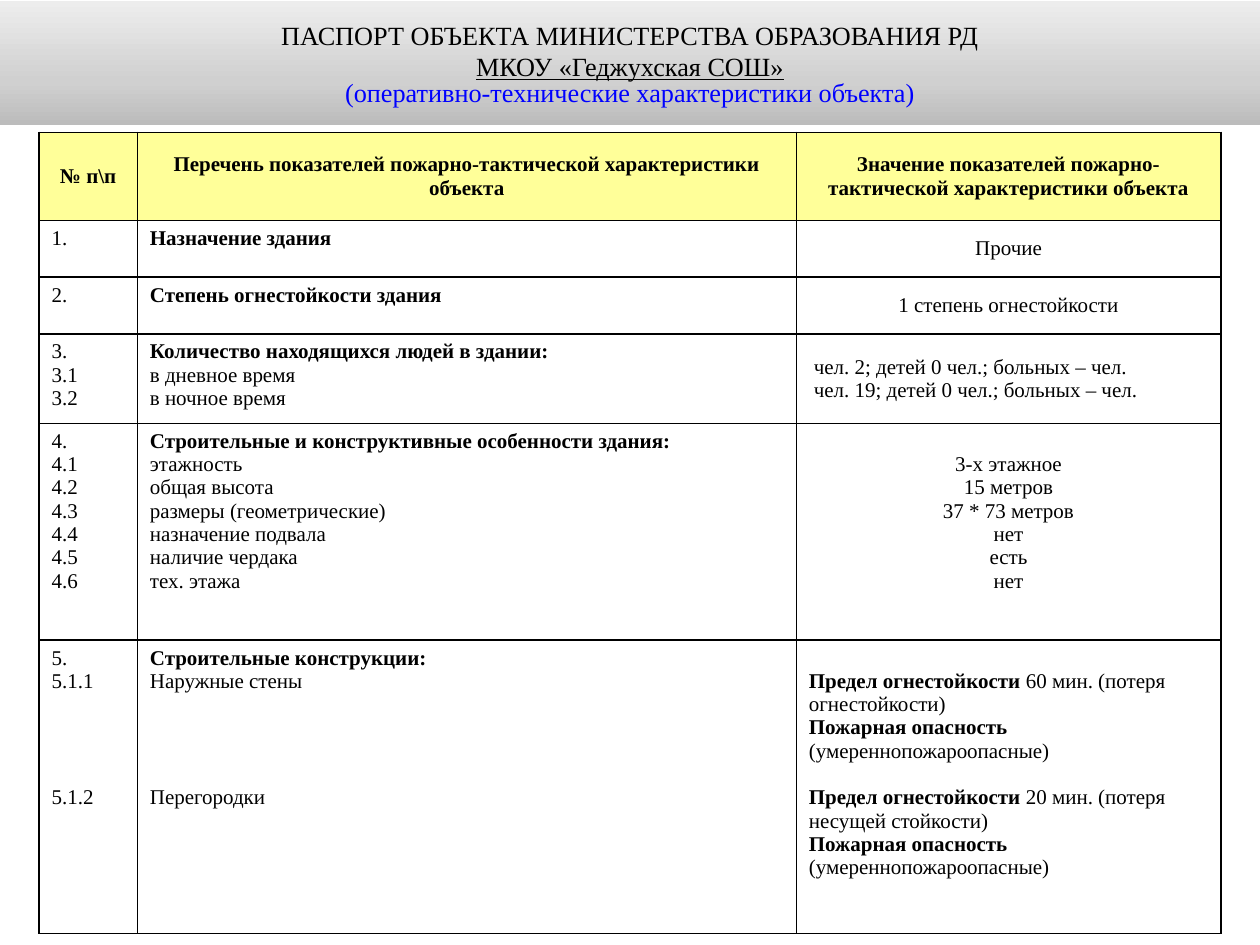
from copy import deepcopy
from pptx import Presentation
from pptx.dml.color import RGBColor
from pptx.enum.shapes import MSO_SHAPE as Shape
from pptx.enum.text import MSO_ANCHOR as Anchor, PP_ALIGN as Align
from pptx.oxml import parse_xml
from pptx.oxml.ns import nsdecls, qn
from pptx.util import Inches, Pt

FONT = "Times New Roman"
LINE = 13.3
TITLE = [
    ("ПАСПОРТ ОБЪЕКТА МИНИСТЕРСТВА ОБРАЗОВАНИЯ РД", "000000", False, 1.0),
    ("МКОУ «Геджухская СОШ»", "000000", True, 1.0),
    ("(оперативно-технические характеристики объекта)", "0000FF", False, 0.8),
]
STOPS = [(0, "BCBCBC"), (0.35, "D0D0D0"), (1, "EDEDED")]
COLS = [0.78, 5.23, 3.37]
ROWS = [0.7, 0.45, 0.45, 0.71, 1.72, 2.33]

# Text before "|" is bold; a pair gives blank lines above and the text.
CELLS = [
    [[r"№ п\п|"],
     ["Перечень показателей пожарно-тактической характеристики объекта|"],
     ["Значение показателей пожарно-тактической характеристики объекта|"]],
    [["1."], ["Назначение здания|"], ["Прочие"]],
    [["2."], ["Степень огнестойкости здания|"], ["1 степень огнестойкости"]],
    [["3.", "3.1", "3.2"],
     ["Количество находящихся людей в здании:|", "в дневное время", "в ночное время"],
     ["чел. 2; детей 0 чел.; больных – чел.", "чел. 19; детей 0 чел.; больных – чел."]],
    [["4.", "4.1", "4.2", "4.3", "4.4", "4.5", "4.6"],
     ["Строительные и конструктивные особенности здания:|", "этажность", "общая высота",
      "размеры (геометрические)", "назначение подвала", "наличие чердака", "тех. этажа"],
     [(1, "3-х этажное"), "15 метров", "37 * 73 метров", "нет", "есть", "нет"]],
    [["5.", "5.1.1", (4, "5.1.2")],
     ["Строительные конструкции:|", "Наружные стены", (4, "Перегородки")],
     [(1, "Предел огнестойкости |60 мин. (потеря огнестойкости)"),
      "Пожарная опасность |(умереннопожароопасные)",
      (1, "Предел огнестойкости |20 мин. (потеря несущей стойкости)"),
      "Пожарная опасность|", "(умереннопожароопасные)"]],
]


def rgb(code):
    return RGBColor.from_string(code)


def style(par, size, color, align):
    par.alignment = align
    par.font.name = FONT
    par.font.size = Pt(size)
    par.font.color.rgb = rgb(color)


def border(cell):
    props = cell._tc.get_or_add_tcPr()
    for i, side in enumerate(("lnL", "lnR", "lnT", "lnB")):
        props.insert(i, parse_xml(
            f'<a:{side} {nsdecls("a")} w="12700"><a:solidFill>'
            f'<a:srgbClr val="000000"/></a:solidFill></a:{side}>'))


def write(cell, items, align):
    frame = cell.text_frame
    for i, item in enumerate(items):
        gap, text = item if isinstance(item, tuple) else (0, item)
        par = frame.add_paragraph() if i else frame.paragraphs[0]
        style(par, 12, "000000", align)
        if i:
            par.space_before = Pt(gap * LINE)
        else:
            cell.margin_top = Inches(0.05) + Pt(gap * LINE)
        bold, bar, plain = text.partition("|")
        if not bar:
            bold, plain = "", text
        par.font.bold = not plain
        for part, heavy in ((bold, True), (plain, False)):
            if part:
                run = par.add_run()
                run.text = part
                if bold and plain:
                    run.font.bold = heavy


def fill_table(slide):
    table = slide.shapes.add_table(
        len(ROWS), len(COLS), Inches(0.31), Inches(1.05),
        Inches(sum(COLS)), Inches(sum(ROWS))).table
    for col, width in zip(table.columns, COLS):
        col.width = Inches(width)
    for row, height in zip(table.rows, ROWS):
        row.height = Inches(height)
    for r, line in enumerate(CELLS):
        for c, items in enumerate(line):
            cell = table.cell(r, c)
            cell.fill.solid()
            cell.fill.fore_color.rgb = rgb("FFFFFF" if r else "FFFF99")
            cell.margin_left = Inches(0.14 if (r, c) == (3, 2) else 0.1)
            cell.margin_right = Inches(0.1)
            cell.margin_bottom = Inches(0.05)
            middle = r == 0 or (c == 2 and r < 4)
            cell.vertical_anchor = Anchor.MIDDLE if middle else Anchor.TOP
            center = r == 0 or (c == 2 and r in (1, 2, 4))
            write(cell, items, Align.CENTER if center else Align.LEFT)
            border(cell)


def add_title(slide):
    band = slide.shapes.add_shape(
        Shape.RECTANGLE, 0, Inches(0.01), Inches(10), Inches(0.98))
    band.shadow.inherit = False
    band.line.fill.background()
    band.fill.gradient()
    stops = band._element.spPr.find(".//" + qn("a:gsLst"))
    stops.insert(1, deepcopy(stops[0]))
    for stop, (pos, color) in zip(band.fill.gradient_stops, STOPS):
        stop.position = pos
        stop.color.rgb = rgb(color)
    band.fill.gradient_angle = 90
    frame = band.text_frame
    frame.word_wrap = True
    frame.vertical_anchor = Anchor.MIDDLE
    frame.margin_left = frame.margin_right = Inches(0.09)
    for i, (text, color, under, space) in enumerate(TITLE):
        par = frame.add_paragraph() if i else frame.paragraphs[0]
        par.text = text
        style(par, 15, color, Align.CENTER)
        par.font.underline = under
        par.line_spacing = space


def main():
    deck = Presentation()
    deck.slide_width, deck.slide_height = Inches(10), Inches(7.5)
    slide = deck.slides.add_slide(deck.slide_layouts[6])
    fill_table(slide)
    add_title(slide)
    deck.save("out.pptx")


if __name__ == "__main__":
    main()
